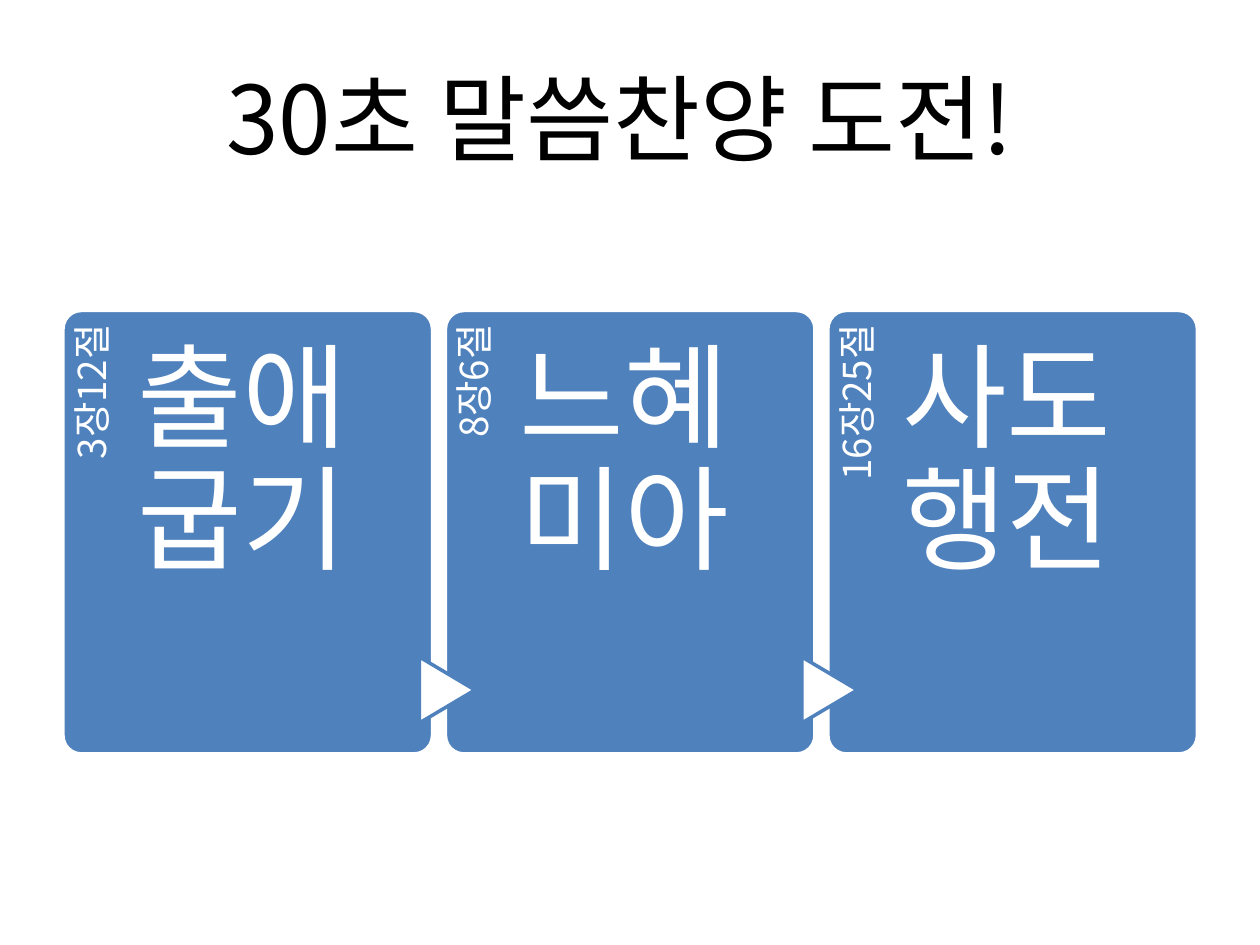
from lxml import etree
from pptx import Presentation
from pptx.dml.color import RGBColor
from pptx.enum import shapes, text
from pptx.oxml.ns import qn
from pptx.util import Cm, Pt

TITLE = "30초 말씀찬양 도전! "
VERSES = [("출애굽기", "3장12절"), ("느혜미아", "8장6절"), ("사도행전", "16장25절")]
FONT = "Noto Sans CJK KR"
BLUE, WHITE, BLACK = "4F81BD", "FFFFFF", "000000"

# Card grid, in cm
LEFT, TOP, PITCH = 1.27, 6.26, 7.71
CARD_W, CARD_H = 7.45, 8.94
LABEL_W, LABEL_H = 7.31, 1.5
BOOK_W = 5.54
ARROW_W, ARROW_H = 1.33, 1.12


def rgb(value):
    return RGBColor.from_string(value)


def add_shape(slide, kind, box, fill, line):
    sp = slide.shapes.add_shape(kind, *map(Cm, box))
    sp.shadow.inherit = False
    sp.fill.solid()
    sp.fill.fore_color.rgb = rgb(fill)
    sp.line.color.rgb = rgb(line)
    sp.line.width = Pt(2)
    return sp


def add_text(slide, content, box, size, color, align, insets, spacing=1.0):
    sp = slide.shapes.add_textbox(*map(Cm, box))
    tf = sp.text_frame
    tf.word_wrap = True
    tf.margin_left, tf.margin_top, tf.margin_right, tf.margin_bottom = map(Cm, insets)
    tf.text = content
    p = tf.paragraphs[0]
    p.alignment = align
    p.line_spacing = spacing
    r = p.runs[0]
    r.font.name = FONT
    r.font.size = Pt(size)
    r.font.color.rgb = rgb(color)
    # Hangul takes the East Asian typeface
    ea = etree.Element(qn("a:ea"), typeface=FONT)
    r.font._element.find(qn("a:latin")).addnext(ea)
    return sp


def add_card(slide, i, book, verse):
    x = LEFT + i * PITCH
    sp = add_shape(slide, shapes.MSO_SHAPE.ROUNDED_RECTANGLE,
                   (x, TOP, CARD_W, CARD_H), BLUE, WHITE)
    sp.adjustments[0] = 0.05

    # Verse reference, turned to run up the card's left edge
    label_x = x + (LABEL_H - LABEL_W) / 2
    label_y = TOP + (LABEL_W - LABEL_H) / 2
    label = add_text(slide, verse, (label_x, label_y, LABEL_W, LABEL_H), 22, WHITE,
                     text.PP_ALIGN.RIGHT, (0, 0.2, 0.28, 0), 0.9)
    label.rotation = 270

    # Arrow from the previous card
    if i:
        arrow = add_shape(slide, shapes.MSO_SHAPE.FLOWCHART_EXTRACT,
                          (x - 0.63, 13.35, ARROW_W, ARROW_H), WHITE, BLUE)
        arrow.rotation = 90

    # Book name, to the right of the verse reference
    add_text(slide, book, (x + LABEL_H, TOP, BOOK_W, CARD_H), 65, WHITE,
             text.PP_ALIGN.LEFT, (0, 0.61, 0, 0), 0.9)


def main():
    prs = Presentation()
    prs.slide_width, prs.slide_height = Cm(25.4), Cm(19.05)
    slide = prs.slides.add_slide(prs.slide_layouts[6])

    for i, (book, verse) in enumerate(VERSES):
        add_card(slide, i, book, verse)

    # Title
    title = add_text(slide, TITLE, (LEFT, 0.76, 22.86, 3.18), 54, BLACK,
                     text.PP_ALIGN.CENTER, (0.25, 0.13, 0.25, 0.13))
    title.text_frame.vertical_anchor = text.MSO_ANCHOR.MIDDLE

    prs.save("out.pptx")


if __name__ == "__main__":
    main()
